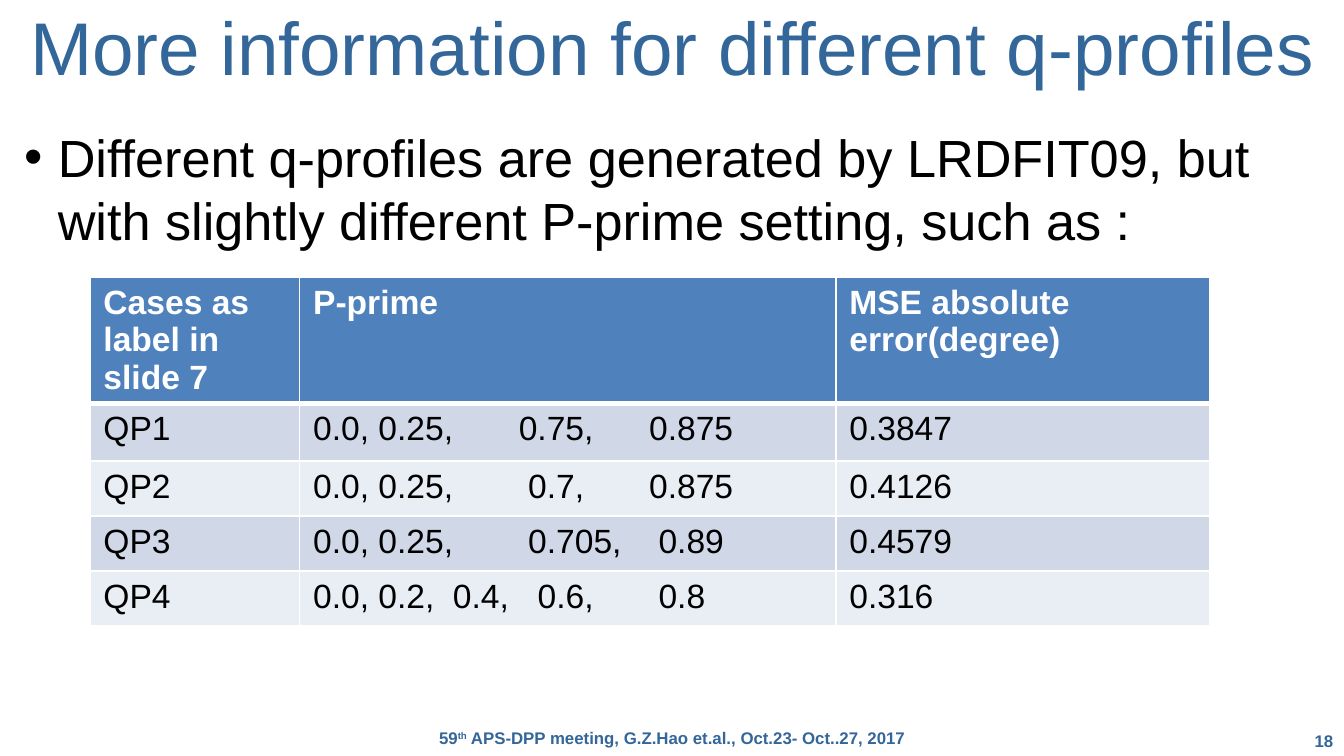
from lxml.etree import SubElement
from pptx import Presentation
from pptx.dml.color import RGBColor
from pptx.enum.text import MSO_ANCHOR, MSO_AUTO_SIZE as AutoSize, PP_ALIGN
from pptx.oxml.ns import qn
from pptx.util import Inches, Pt

COLORS = {
    "accent": "336699",
    "text": "000000",
    "white": "FFFFFF",
    "header": "4F81BD",
    "odd": "D0D8E8",
    "even": "E9EDF4",
}
FONT = "Arial"
COLUMN_WIDTHS = [1.56, 3.99, 2.78]
ROW_HEIGHTS = [0.93, 0.43, 0.41, 0.41, 0.41]
ROWS = [
    ["Cases as label in slide 7", "P-prime", "MSE absolute error(degree)"],
    ["QP1", "0.0, 0.25,\t0.75,\t0.875", "0.3847"],
    ["QP2", "0.0, 0.25,\t0.7,\t0.875", "0.4126"],
    ["QP3", "0.0, 0.25,\t0.705,\t0.89", "0.4579"],
    ["QP4", "0.0, 0.2,\t0.4,\t0.6,\t0.8", "0.316"],
]
# Tab stops of the P-prime column, by table row
TAB_STOPS = {1: [1.53, 2.5], 2: [1.6, 2.5], 3: [1.6, 2.57], 4: [1.04, 1.67, 2.57]}


class SlideBuilder:
    def __init__(self, presentation):
        self.slide = presentation.slides.add_slide(presentation.slide_layouts[1])

    def style(self, paragraph, size, color, bold=False):
        for run in paragraph.runs:
            run.font.name = FONT
            run.font.size = Pt(size)
            run.font.bold = bold
            run.font.color.rgb = RGBColor.from_string(COLORS[color])

    def place(self, shape, left, top, width, height):
        shape.left, shape.top = Inches(left), Inches(top)
        shape.width, shape.height = Inches(width), Inches(height)
        shape.text_frame.word_wrap = True
        shape.text_frame.auto_size = AutoSize.NONE

    def title(self, text):
        shape = self.slide.shapes.title
        self.place(shape, 0, 0, 10, 0.79)
        frame = shape.text_frame
        frame.margin_left = frame.margin_right = Inches(0.05)
        frame.vertical_anchor = MSO_ANCHOR.MIDDLE
        frame.text = text
        paragraph = frame.paragraphs[0]
        paragraph.alignment = PP_ALIGN.CENTER
        paragraph.line_spacing = 0.85
        self.style(paragraph, 40, "accent")

    def body(self, text):
        shape = self.slide.placeholders[1]
        self.place(shape, 0.08, 0.88, 9.83, 4.44)
        shape.text_frame.text = text
        paragraph = shape.text_frame.paragraphs[0]
        paragraph.space_before = Pt(0)
        paragraph.line_spacing = 1.0
        properties = paragraph._p.get_or_add_pPr()
        properties.set("marL", str(Inches(0.25)))
        properties.set("indent", str(Inches(-0.25)))
        SubElement(properties, qn("a:buChar"), char="•")
        self.style(paragraph, 28, "text")

    def footer(self, parts, left, width, alignment):
        """Add a footer line; every second part is superscript."""
        shape = self.slide.shapes.add_textbox(0, 0, 0, 0)
        self.place(shape, left, 5.4, width, 0.22)
        frame = shape.text_frame
        frame.margin_left = frame.margin_right = 0
        frame.margin_top = frame.margin_bottom = Inches(0.04)
        paragraph = frame.paragraphs[0]
        paragraph.alignment = alignment
        paragraph.line_spacing = 0.85 if len(parts) > 1 else 1.0
        for index, part in enumerate(parts):
            run = paragraph.add_run()
            run.text = part
            if index % 2:
                run._r.get_or_add_rPr().set("baseline", "30000")
        self.style(paragraph, 9, "accent", bold=True)

    def borders(self, cell, bottom):
        properties = cell._tc.get_or_add_tcPr()
        for side, width in (("L", 1), ("R", 1), ("T", 1), ("B", bottom)):
            line = SubElement(properties, qn(f"a:ln{side}"), w=str(Pt(width)))
            fill = SubElement(line, qn("a:solidFill"))
            SubElement(fill, qn("a:srgbClr"), val=COLORS["white"])

    def tabs(self, paragraph, stops):
        tab_list = SubElement(paragraph._p.get_or_add_pPr(), qn("a:tabLst"))
        for stop in stops:
            SubElement(tab_list, qn("a:tab"), pos=str(Inches(stop)), algn="l")

    def table(self, rows):
        table = self.slide.shapes.add_table(
            len(rows), len(COLUMN_WIDTHS), Inches(0.67), Inches(2.06),
            Inches(sum(COLUMN_WIDTHS)), Inches(sum(ROW_HEIGHTS))).table
        for column, width in zip(table.columns, COLUMN_WIDTHS):
            column.width = Inches(width)
        for row, height in zip(table.rows, ROW_HEIGHTS):
            row.height = Inches(height)
        for row_index, values in enumerate(rows):
            is_header = row_index == 0
            fill = "header" if is_header else "odd" if row_index % 2 else "even"
            for column_index, value in enumerate(values):
                cell = table.cell(row_index, column_index)
                self.borders(cell, 3 if is_header else 1)
                cell.fill.solid()
                cell.fill.fore_color.rgb = RGBColor.from_string(COLORS[fill])
                cell.text_frame.text = value
                paragraph = cell.text_frame.paragraphs[0]
                if "\t" in value:
                    self.tabs(paragraph, TAB_STOPS[row_index])
                self.style(paragraph, 18, "white" if is_header else "text", is_header)


def main():
    presentation = Presentation()
    presentation.slide_width = Inches(10)
    presentation.slide_height = Inches(10 * 9 / 16)
    builder = SlideBuilder(presentation)
    builder.footer(["18"], 9.25, 0.67, PP_ALIGN.RIGHT)
    builder.footer(
        ["59", "th", " APS-DPP meeting, G.Z.Hao et.al., Oct.23- Oct..27, 2017"],
        1, 8, PP_ALIGN.CENTER)
    builder.body("Different q-profiles are generated by LRDFIT09, but with "
                 "slightly different P-prime setting, such as :")
    builder.title("More information for different q-profiles")
    builder.table(ROWS)
    presentation.save("out.pptx")


if __name__ == "__main__":
    main()
